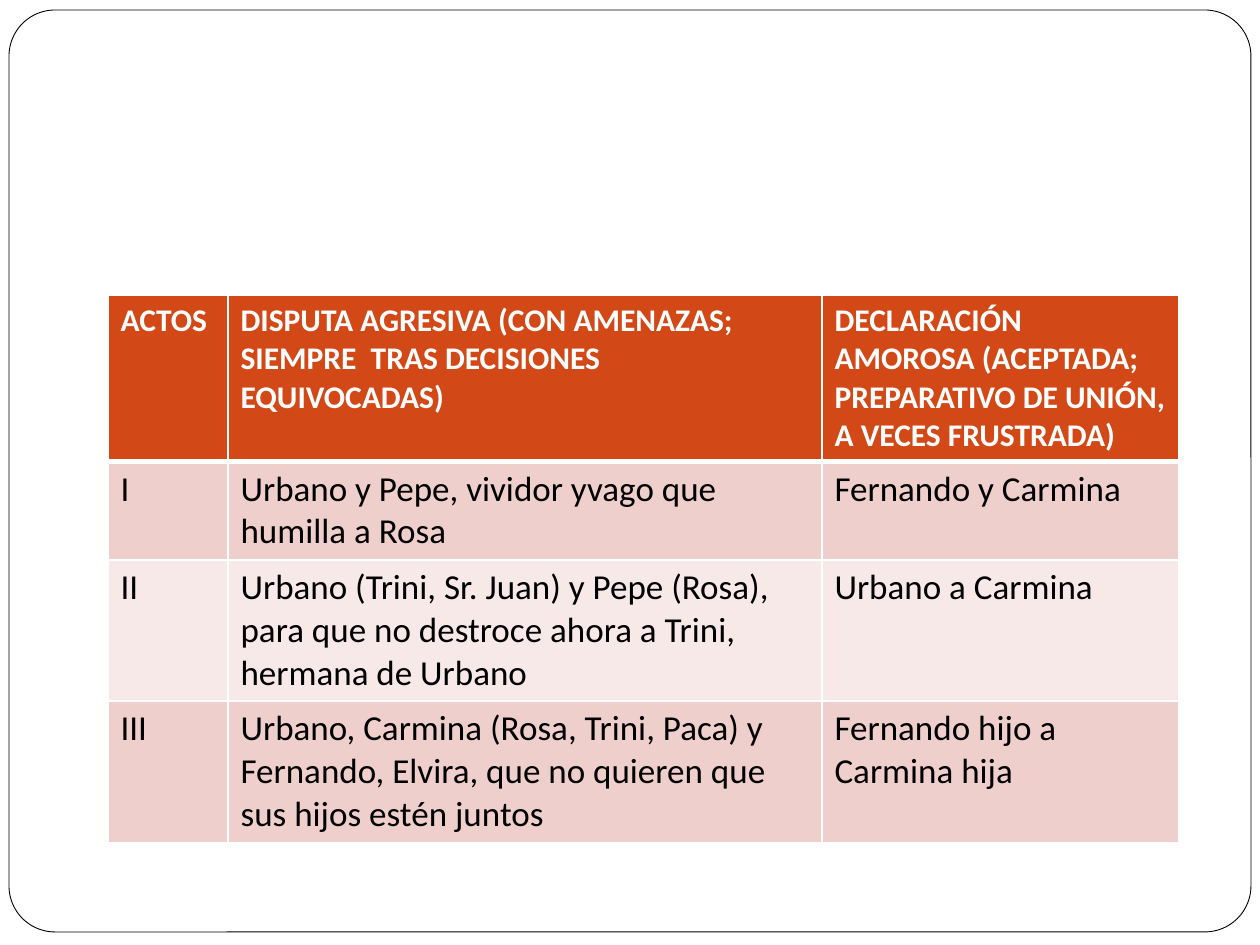
from lxml.etree import SubElement
from pptx import Presentation
from pptx.dml.color import RGBColor
from pptx.enum.shapes import MSO_SHAPE as Shape
from pptx.oxml.ns import qn
from pptx.util import Emu, Pt

EMU_PER_PX = 914400 / 126
WHITE, BLACK, ORANGE = "FFFFFF", "000000", "D34817"
BANDS = ["EFCFCC", "F7E9E8"]

COLUMN_WIDTHS = [120, 594, 357]
ROW_HEIGHTS = [165, 98, 141, 141]
ROWS = [
    ["ACTOS",
     "DISPUTA AGRESIVA (CON AMENAZAS; SIEMPRE  TRAS DECISIONES EQUIVOCADAS)",
     "DECLARACIÓN AMOROSA (ACEPTADA; PREPARATIVO DE UNIÓN, A VECES FRUSTRADA)"],
    ["I", "Urbano y Pepe, vividor yvago que humilla a Rosa", "Fernando y Carmina"],
    ["II",
     "Urbano (Trini, Sr. Juan) y Pepe (Rosa), para que no destroce ahora a Trini, "
     "hermana de Urbano",
     "Urbano a Carmina"],
    ["III",
     "Urbano, Carmina (Rosa, Trini, Paca) y Fernando, Elvira, que no quieren que "
     "sus hijos estén juntos",
     "Fernando hijo a Carmina hija"],
]


def px(length):
    return Emu(round(length * EMU_PER_PX))


def paint(target, color):
    target.solid()
    target.fore_color.rgb = RGBColor.from_string(color)


def add_frame(page, left, top, width, height):
    """Rounded outline around the whole page."""
    frame = page.shapes.add_shape(
        Shape.ROUNDED_RECTANGLE, px(left), px(top), px(width), px(height))
    frame.adjustments[0] = 0.05
    frame.shadow.inherit = False
    paint(frame.fill, WHITE)
    paint(frame.line.fill, BLACK)
    frame.line.width = Pt(0.5)


def set_borders(cell, widths):
    """Draw white cell borders; widths maps a side (L, R, T, B) to points."""
    properties = cell._tc.get_or_add_tcPr()
    for side, width in widths.items():
        line = SubElement(properties, qn(f"a:ln{side}"), w=str(Pt(width)))
        fill = SubElement(line, qn("a:solidFill"))
        SubElement(fill, qn("a:srgbClr"), val=WHITE)


def style_cell(cell, text, row):
    header = row == 0
    # The rule under the header is shared with the first body row
    set_borders(cell, {"L": 1, "R": 1, "T": 3 if row == 1 else 1,
                       "B": 3 if header else 1})
    paint(cell.fill, ORANGE if header else BANDS[(row - 1) % 2])
    cell.text_frame.text = text
    font = cell.text_frame.paragraphs[0].runs[0].font
    font.name = "Calibri"
    font.size = Pt(18 if header else 20)
    font.bold = header
    font.color.rgb = RGBColor.from_string(WHITE if header else BLACK)


def add_acts_table(page, left, top):
    """Acts of the play, with their disputes and declarations."""
    table = page.shapes.add_table(
        len(ROWS), len(COLUMN_WIDTHS), px(left), px(top),
        px(sum(COLUMN_WIDTHS)), px(sum(ROW_HEIGHTS))).table
    for column, width in zip(table.columns, COLUMN_WIDTHS):
        column.width = px(width)
    for row, (texts, height) in enumerate(zip(ROWS, ROW_HEIGHTS)):
        table.rows[row].height = px(height)
        for column, text in enumerate(texts):
            style_cell(table.cell(row, column), text, row)


def main():
    deck = Presentation()
    deck.slide_width, deck.slide_height = px(1260), px(945)
    page = deck.slides.add_slide(deck.slide_layouts[6])
    paint(page.background.fill, WHITE)
    add_frame(page, 9, 10, 1242, 922)
    add_acts_table(page, 108, 295)
    deck.save("out.pptx")


if __name__ == "__main__":
    main()
